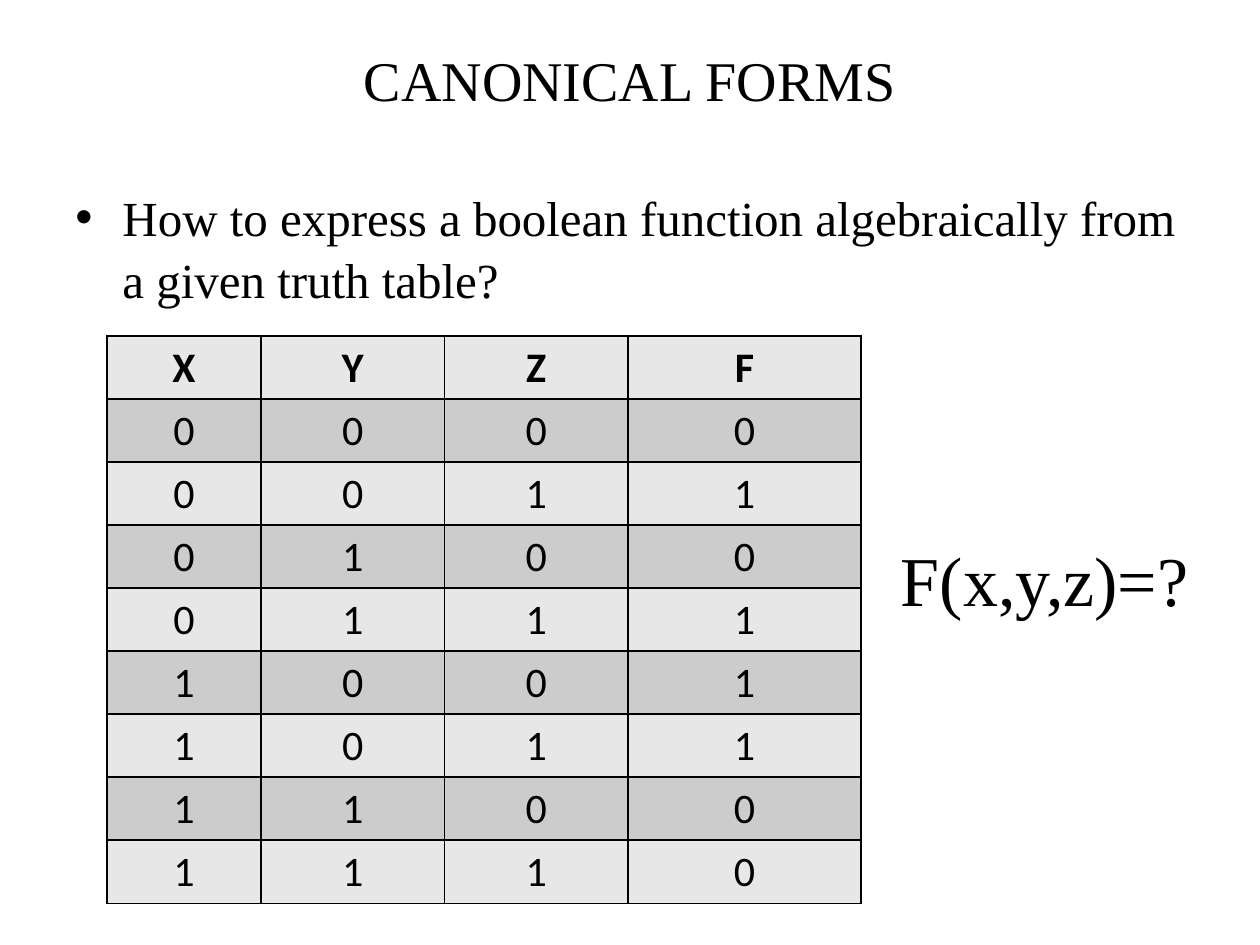
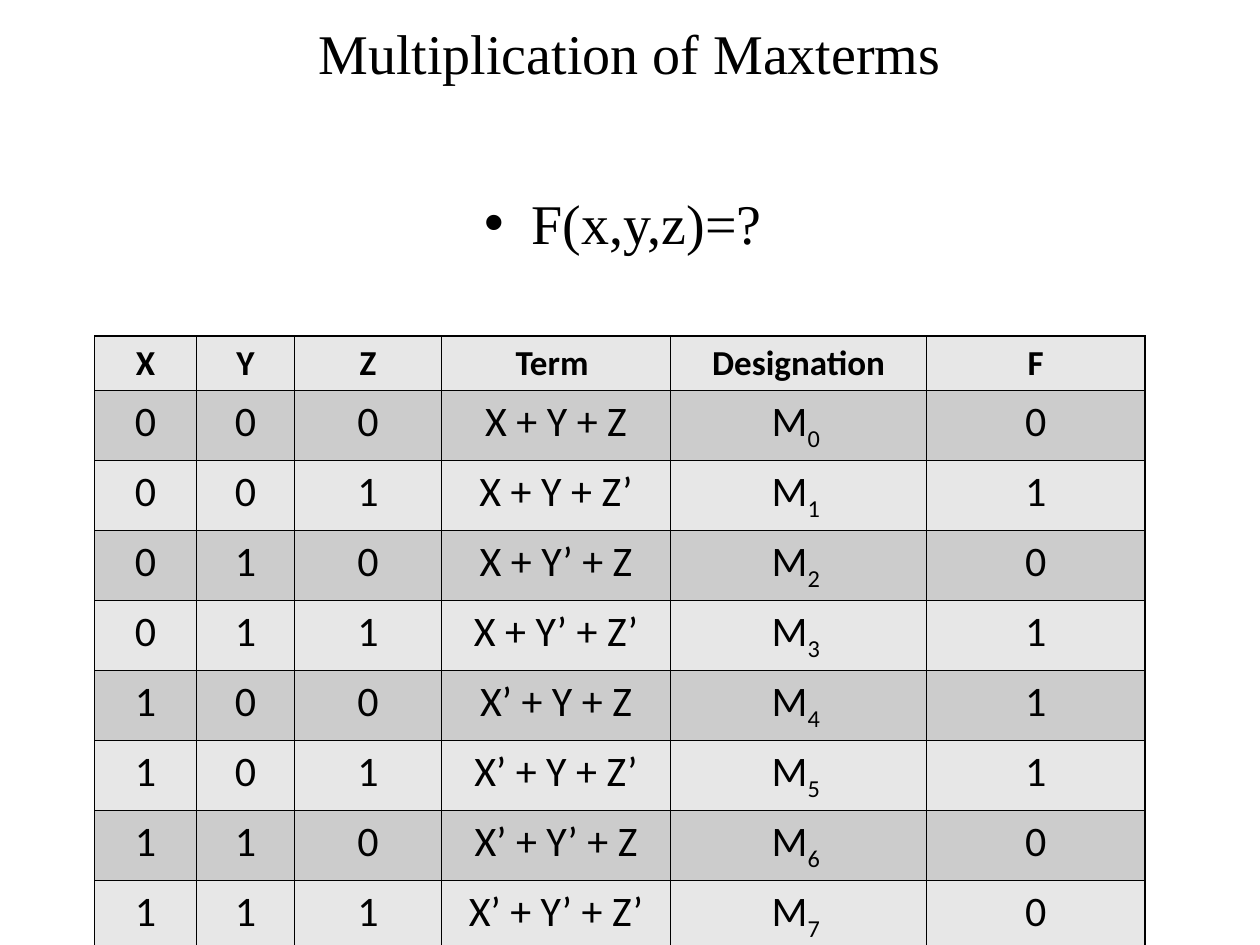
from itertools import product

from lxml.etree import SubElement
from pptx import Presentation
from pptx.dml.color import RGBColor
from pptx.enum.text import MSO_ANCHOR as Anchor, PP_ALIGN as Align
from pptx.oxml.ns import qn
from pptx.util import Cm, Pt

# Shared style
INK, LIGHT, DARK = "000000", "E7E7E7", "CCCCCC"
SERIF, SANS = "Times New Roman", "Calibri"
MARGIN, TEXT_WIDTH = 1.27, 22.86
TABLE_TOP, ROW_HEIGHT = 6.77, 1.1

# Truth table shared by both slides
VARIABLES = ["X", "Y", "Z"]
INPUTS = list(product("01", repeat=3))
OUTPUTS = "01011100"


def color(hex_code):
    return RGBColor.from_string(hex_code)


def set_font(font, name, size, bold=False):
    font.name, font.size, font.bold = name, Pt(size), bold
    font.color.rgb = color(INK)


def add_text(page, text, left, top, width, height, size,
             align=Align.CENTER, anchor=Anchor.MIDDLE):
    box = page.shapes.add_textbox(Cm(left), Cm(top), Cm(width), Cm(height))
    frame = box.text_frame
    frame.word_wrap = True
    frame.vertical_anchor = anchor
    para = frame.paragraphs[0]
    para.text = text
    para.alignment = align
    set_font(para.font, SERIF, size)
    return para


def add_title(page, text, height):
    add_text(page, text, MARGIN, 0, TEXT_WIDTH, height, 32)


def add_bullet(page, text, size, align):
    para = add_text(page, text, MARGIN, 3.6, TEXT_WIDTH, 12.57, size,
                    align, Anchor.TOP)
    para.space_before = Pt(3)
    para.line_spacing = 1.05
    properties = para._p.get_or_add_pPr()
    indent = Cm(0.95)
    properties.set("marL", str(indent))
    properties.set("indent", str(-indent))
    bullet_font = SubElement(properties, qn("a:buFont"), typeface="Arial")
    bullet_font.addnext(properties.makeelement(qn("a:buChar"), char="•"))
    # Bullet settings come before the default run properties
    defaults = properties.find(qn("a:defRPr"))
    if defaults is not None:
        properties.append(defaults)


def add_borders(cell):
    properties = cell._tc.get_or_add_tcPr()
    for side in ("lnL", "lnR", "lnT", "lnB"):
        line = SubElement(properties, qn(f"a:{side}"), w=str(Pt(1)))
        fill = SubElement(line, qn("a:solidFill"))
        SubElement(fill, qn("a:srgbClr"), val=INK)


def fill_cell(cell, text, size, bold, shade):
    """Write a cell; whatever follows an underscore is a subscript."""
    add_borders(cell)
    cell.fill.solid()
    cell.fill.fore_color.rgb = color(shade)
    para = cell.text_frame.paragraphs[0]
    para.alignment = Align.CENTER
    base, _, subscript = text.partition("_")
    for part in filter(None, (base, subscript)):
        span = para.add_run()
        span.text = part
        set_font(span.font, SANS, size, bold)
    if subscript:
        span._r.get_or_add_rPr().set("baseline", "-25000")


def add_truth_table(page, left, widths, header, rows, header_size):
    lines = [header, *rows]
    frame = page.shapes.add_table(
        len(lines), len(widths), Cm(left), Cm(TABLE_TOP),
        Cm(sum(widths)), Cm(ROW_HEIGHT * len(lines)))
    table = frame.table
    table.first_row = table.horz_banding = False
    for column, width in zip(table.columns, widths):
        column.width = Cm(width)
    for index, line in enumerate(lines):
        is_header = index == 0
        size = header_size if is_header else 24
        shade = DARK if index % 2 else LIGHT
        for column, text in enumerate(line):
            fill_cell(table.cell(index, column), text, size, is_header, shade)


def maxterm(bits):
    return " + ".join(name + ("’" if bit == "1" else "")
                      for name, bit in zip(VARIABLES, bits))


def build_canonical_forms(page):
    add_title(page, "CANONICAL FORMS", 3.18)
    add_bullet(page, "How to express a boolean function algebraically "
               "from a given truth table?", 28, Align.LEFT)
    rows = [[*bits, output] for bits, output in zip(INPUTS, OUTPUTS)]
    add_truth_table(page, 2.16, [3.1, 3.7, 3.7, 4.7],
                    [*VARIABLES, "F"], rows, 24)
    add_text(page, "F(x,y,z)=?", 17.35, TABLE_TOP, 7.42, 9.8, 40)


def build_maxterms(page):
    add_bullet(page, "F(x,y,z)=? ", 32, Align.CENTER)
    rows = [[*bits, maxterm(bits), f"M_{index} ", output]
            for index, (bits, output) in enumerate(zip(INPUTS, OUTPUTS))]
    add_truth_table(page, 1.91, [2.05, 1.98, 2.96, 4.62, 5.16, 4.4],
                    [*VARIABLES, "Term ", "Designation", "F"], rows, 20)
    add_title(page, "Multiplication of Maxterms", 2.12)


def main():
    deck = Presentation()
    deck.slide_width, deck.slide_height = Cm(25.4), Cm(19.05)
    blank = deck.slide_layouts[6]
    for build in (build_canonical_forms, build_maxterms):
        build(deck.slides.add_slide(blank))
    deck.save("out.pptx")


if __name__ == "__main__":
    main()
